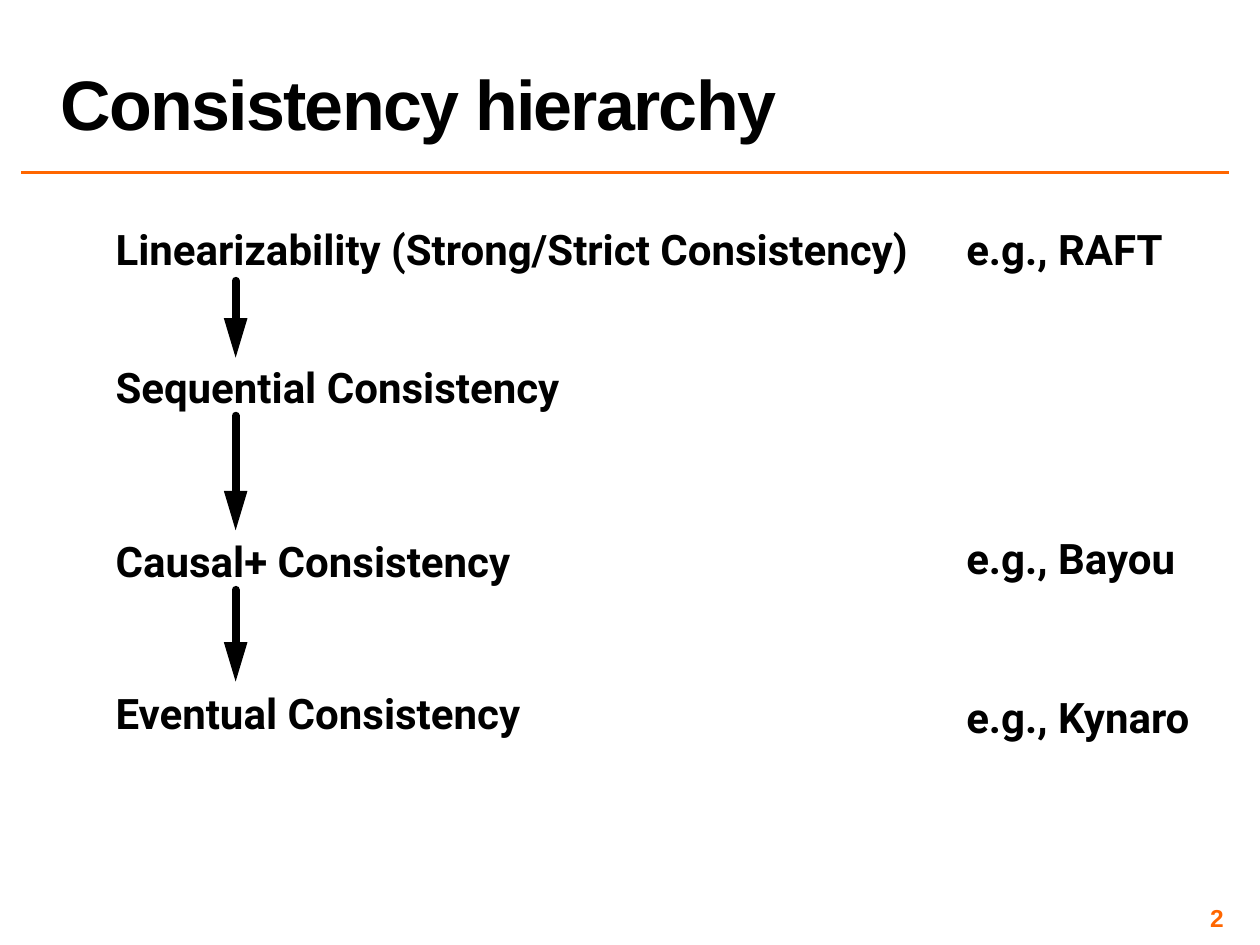
from lxml import etree
from pptx import Presentation
from pptx import util as u
from pptx.dml.color import RGBColor
from pptx.enum import shapes, text
from pptx.oxml.ns import qn

COLORS = {"ink": "000000", "accent": "FF6600"}
LEVEL_LEFT, EXAMPLE_LEFT, ARROW_X = 2.08, 19.23, 4.75
LABEL_HEIGHT = 1.27

# Name, top and width in cm
LEVELS = [
    ("Linearizability (Strong/Strict Consistency)", 4.39, 16.81),
    ("Sequential Consistency", 7.16, 9.8),
    ("Causal+ Consistency", 10.67, 8.86),
    ("Eventual Consistency", 13.74, 9.04),
]
EXAMPLES = [
    ("e.g., RAFT", 4.39, 4.62),
    ("e.g., Bayou", 10.62, 4.95),
    ("e.g., Kynaro", 13.82, 5.72),
]
# Start and end heights in cm
ARROWS = [(5.66, 7.21), (8.38, 10.69), (11.89, 13.74)]


def place(shape, left, top, width, height):
    shape.left, shape.top = u.Cm(left), u.Cm(top)
    shape.width, shape.height = u.Cm(width), u.Cm(height)


def write(shape, words, font="Roboto", size=24, color="ink", wrap=False,
          anchor=text.MSO_ANCHOR.TOP, align=text.PP_ALIGN.LEFT,
          line_spacing=None, tracking=None, inset=None):
    frame = shape.text_frame
    frame.word_wrap = wrap
    frame.auto_size = text.MSO_AUTO_SIZE.NONE
    frame.vertical_anchor = anchor
    if inset is not None:
        frame.margin_left = frame.margin_right = u.Cm(inset)
        frame.margin_top = frame.margin_bottom = u.Cm(inset)
    para = frame.paragraphs[0]
    para.alignment = align
    if line_spacing is not None:
        para.line_spacing = line_spacing
    span = para.add_run()
    span.text = words
    span.font.name, span.font.size, span.font.bold = font, u.Pt(size), True
    span.font.color.rgb = RGBColor.from_string(COLORS[color])
    if tracking is not None:
        span.font._element.set("spc", str(tracking))


def add_label(page, words, left, top, width, height=LABEL_HEIGHT, **style):
    box = page.shapes.add_textbox(0, 0, 0, 0)
    place(box, left, top, width, height)
    write(box, words, **style)


def add_line(page, start, end, color, weight, arrow=False):
    line = page.shapes.add_connector(
        shapes.MSO_CONNECTOR.STRAIGHT, *map(u.Cm, start + end))
    line.line.color.rgb = RGBColor.from_string(COLORS[color])
    line.line.width = u.Pt(weight)
    if arrow:
        outline = line.line._get_or_add_ln()
        outline.set("cap", "rnd")
        etree.SubElement(outline, qn("a:tailEnd"),
                         type="triangle", w="med", len="lg")
    etree.SubElement(line._element.spPr, qn("a:effectLst"))


def main():
    deck = Presentation()
    deck.slide_width, deck.slide_height = u.Cm(25.4), u.Cm(19.05)
    page = deck.slides.add_slide(deck.slide_layouts[5])

    # Title and rule
    title = page.shapes.title
    place(title, 0.97, 0.05, 23.8, 2.97)
    write(title, "Consistency hierarchy", font="Arial", size=40, wrap=True,
          anchor=text.MSO_ANCHOR.BOTTOM, line_spacing=0.8, tracking=-100)
    add_line(page, (0.43, 3.48), (24.77, 3.48), "accent", 2)

    # Hierarchy and examples
    for left, labels in ((LEVEL_LEFT, LEVELS), (EXAMPLE_LEFT, EXAMPLES)):
        for words, top, width in labels:
            add_label(page, words, left, top, width)
    for start, end in ARROWS:
        add_line(page, (ARROW_X, start), (ARROW_X, end), "ink", 4.5, arrow=True)

    # Page number
    add_label(page, "2", 18.85, 18.21, 5.92, 0.58, font="Arial", size=14,
              color="accent", wrap=True, anchor=text.MSO_ANCHOR.MIDDLE,
              align=text.PP_ALIGN.RIGHT, inset=0.1)

    deck.save("out.pptx")


if __name__ == "__main__":
    main()
